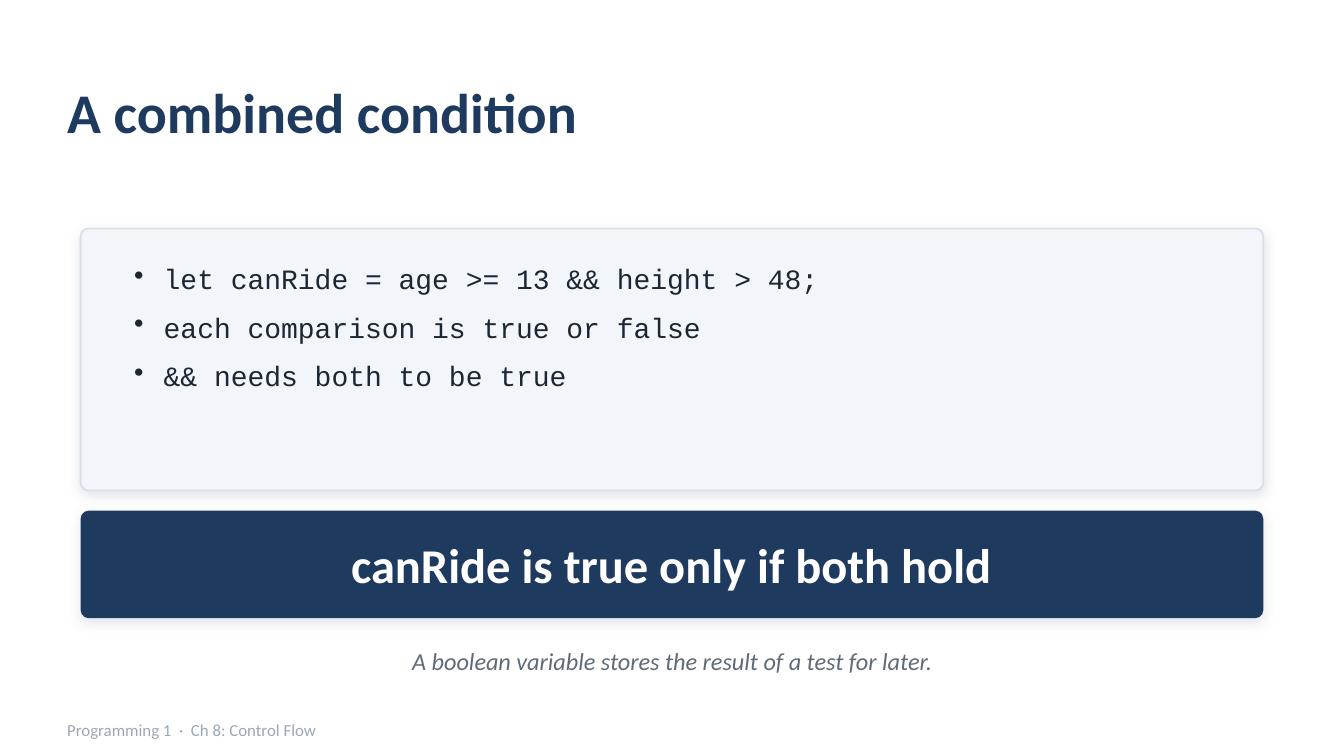
from lxml import etree
from pptx import Presentation
from pptx.dml.color import RGBColor
from pptx.enum.shapes import MSO_SHAPE
from pptx.enum.text import MSO_ANCHOR, PP_ALIGN
from pptx.oxml.ns import qn
from pptx.util import Inches, Pt

ROUNDED = MSO_SHAPE.ROUNDED_RECTANGLE
TOP, MIDDLE = MSO_ANCHOR.TOP, MSO_ANCHOR.MIDDLE
LEFT, CENTER = PP_ALIGN.LEFT, PP_ALIGN.CENTER

COLORS = {
    "navy": "1F3A5F",
    "panel": "F2F5F9",
    "border": "D8E0E9",
    "ink": "1B2733",
    "muted": "5E6B79",
    "mist": "9AA8B6",
    "white": "FFFFFF",
}
BODY_FONT, CODE_FONT = "Calibri", "Courier New"
CARD_LEFT, CARD_WIDTH = 0.6, 8.8
CORNER_RADIUS = 0.06


def color(name):
    return RGBColor.from_string(COLORS[name])


def add_span(para, text, *, size, ink, font=BODY_FONT, bold=False, italic=False):
    span = para.add_run()
    span.text = text
    span.font.name = font
    span.font.size = Pt(size)
    span.font.bold = bold
    span.font.italic = italic
    span.font.color.rgb = color(ink)


class SlideBuilder:
    """Holds the deck style and the current page."""

    def __init__(self, deck):
        self.page = deck.slides.add_slide(deck.slide_layouts[6])
        background = self.page.background.fill
        background.solid()
        background.fore_color.rgb = color("white")

    def text_frame(self, left, top, width, height, anchor, inset):
        box = self.page.shapes.add_textbox(
            Inches(left), Inches(top), Inches(width), Inches(height))
        frame = box.text_frame
        frame.word_wrap = True
        frame.vertical_anchor = anchor
        frame.margin_left = frame.margin_right = Inches(inset)
        frame.margin_top = frame.margin_bottom = Inches(inset / 2)
        return frame

    def label(self, text, left, top, width, height, align=LEFT, **style):
        frame = self.text_frame(left, top, width, height, MIDDLE, 0)
        para = frame.paragraphs[0]
        para.alignment = align
        add_span(para, text, **style)

    def bullets(self, items, left, top, width, height, **style):
        frame = self.text_frame(left, top, width, height, TOP, 0.1)
        for index, item in enumerate(items):
            para = frame.add_paragraph() if index else frame.paragraphs[0]
            properties = para._p.get_or_add_pPr()
            properties.set("marL", str(Inches(0.22)))
            properties.set("indent", str(Inches(-0.22)))
            etree.SubElement(properties, qn("a:buSzPct"), val="100000")
            etree.SubElement(properties, qn("a:buChar"), char="•")
            para.space_after = Pt(8)
            add_span(para, item, **style)

    def card(self, top, height, fill, border=None):
        card = self.page.shapes.add_shape(
            ROUNDED, Inches(CARD_LEFT), Inches(top),
            Inches(CARD_WIDTH), Inches(height))
        card.adjustments[0] = CORNER_RADIUS / height
        card.fill.solid()
        card.fill.fore_color.rgb = color(fill)
        if border:
            card.line.color.rgb = color(border)
            card.line.width = Pt(1)
        else:
            card.line.fill.background()
        self.soft_shadow(card)

    def soft_shadow(self, shape):
        shape.shadow.inherit = False
        effects = shape._element.spPr.find(qn("a:effectLst"))
        shadow = etree.SubElement(
            effects, qn("a:outerShdw"), blurRad=str(Pt(6)), dist=str(Pt(2)),
            dir=str(90 * 60000), algn="bl", rotWithShape="0")
        tint = etree.SubElement(shadow, qn("a:srgbClr"), val=COLORS["mist"])
        etree.SubElement(tint, qn("a:alpha"), val=str(28 * 1000))


def main():
    # Widescreen page, 16:9
    deck = Presentation()
    deck.slide_width = Inches(10)
    deck.slide_height = Inches(10 * 9 / 16)
    slide = SlideBuilder(deck)

    # Title
    slide.label("A combined condition", 0.5, 0.4, 9, 0.85,
                size=30, ink="navy", bold=True)

    # Code panel
    slide.card(1.7, 1.95, "panel", border="border")
    slide.bullets(
        ["let canRide = age >= 13 && height > 48;",
         "each comparison is true or false",
         "&& needs both to be true"],
        0.9, 1.9, 8.2, 1.6, size=15, ink="ink", font=CODE_FONT)

    # Takeaway banner
    slide.card(3.8, 0.8, "navy")
    slide.label("canRide is true only if both hold",
                CARD_LEFT, 3.83, CARD_WIDTH, 0.74, align=CENTER,
                size=26, ink="white", bold=True)

    # Caption and footer
    slide.label("A boolean variable stores the result of a test for later.",
                CARD_LEFT, 4.72, CARD_WIDTH, 0.4, align=CENTER,
                size=13, ink="muted", italic=True)
    slide.label("Programming 1  ·  Ch 8: Control Flow", 0.5, 5.3, 8, 0.26,
                size=9, ink="mist")

    deck.save("out.pptx")


if __name__ == "__main__":
    main()
